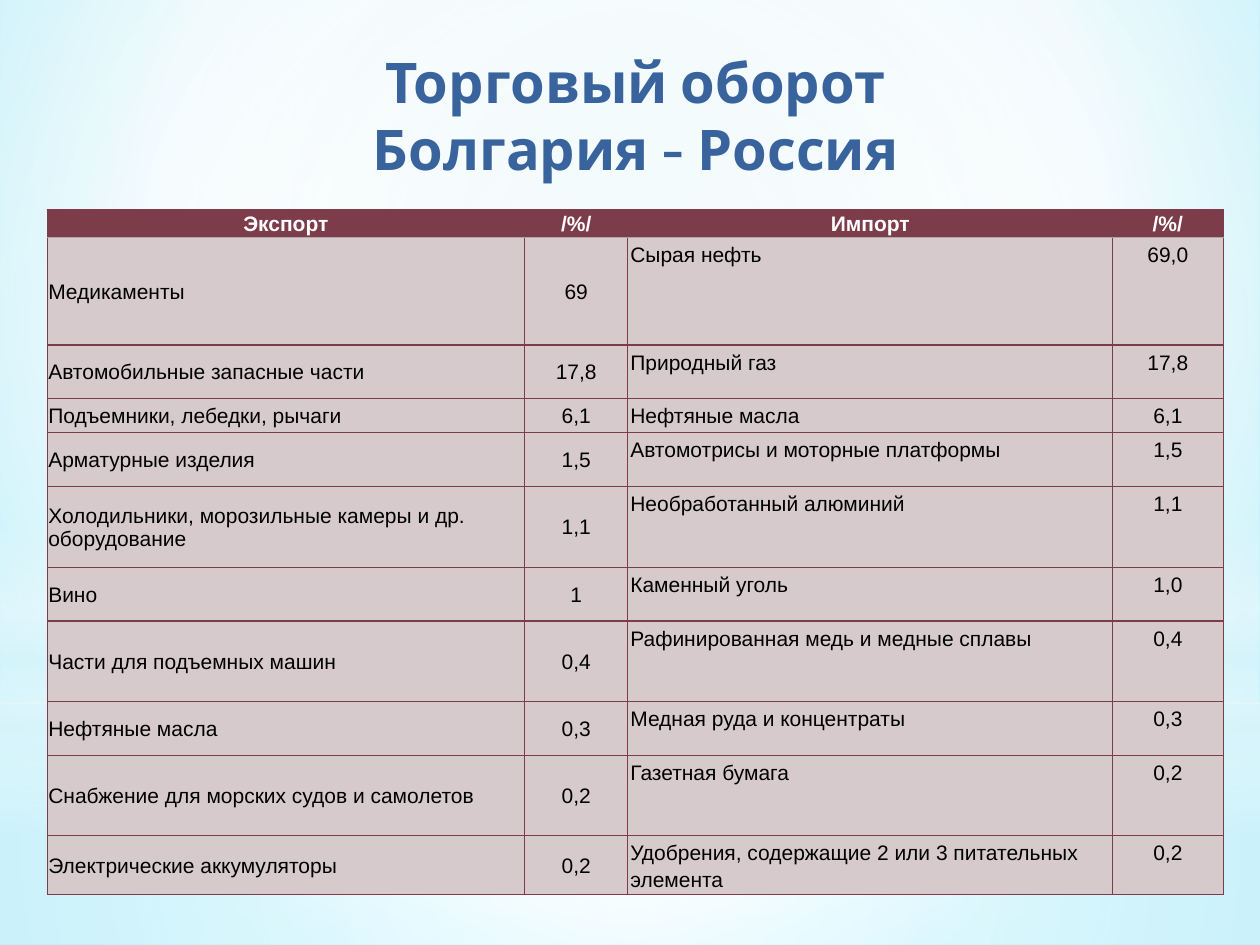
from typing import NamedTuple

from lxml.etree import SubElement
from pptx import Presentation
from pptx.dml.color import RGBColor
from pptx.enum.shapes import MSO_SHAPE as Preset
from pptx.enum.text import MSO_ANCHOR as Anchor, MSO_AUTO_SIZE as AutoSize, PP_ALIGN as Align
from pptx.oxml.ns import qn
from pptx.util import Pt

COLORS = {
    "title": "39639D", "wine": "7D3C4A", "rose": "D6CACC", "grey": "A9A9A9",
    "white": "FFFFFF", "black": "000000",
    "sky": "CDEFF7", "cyan": "7CE7FF", "ice": "DEF5FA",
}
CENTER = (50, 50, 50, 50)


class Stop(NamedTuple):
    position: int
    color: str
    opacity: int = 100


class Glow(NamedTuple):
    preset: Preset
    top: float
    height: float
    stops: list[Stop]
    focus: tuple | None = CENTER  # None gives a vertical linear gradient


class TradeRow(NamedTuple):
    height: float
    exported: str
    export_share: str
    imported: str
    import_share: str


BACKGROUND = [Stop(0, "sky"), Stop(60, "white"), Stop(100, "cyan")]
GLOWS = [
    Glow(Preset.RECTANGLE, 401.76, 138.24,
         [Stop(0, "white", 91), Stop(37, "white", 76), Stop(100, "ice", 79)]),
    Glow(Preset.RECTANGLE, 0, 401.76,
         [Stop(0, "white", 89), Stop(48, "white", 62), Stop(100, "ice", 79)]),
    Glow(Preset.RECTANGLE, 296.64, 180,
         [Stop(0, "white", 0), Stop(29, "white", 30), Stop(45, "ice", 40),
          Stop(55, "white", 26), Stop(65, "ice", 60), Stop(100, "white", 0)], None),
    Glow(Preset.OVAL, 126, 401.76, [Stop(0, "white"), Stop(56, "white", 0)]),
]
COLUMN_WIDTHS = [272.9, 59, 277, 63.2]
ROWS = [
    TradeRow(15.84, "Экспорт", "/%/", "Импорт", "/%/"),
    TradeRow(61.4, "Медикаменты", "69", "Сырая нефть", "69,0"),
    TradeRow(30.8, "Автомобильные запасные части", "17,8", "Природный газ", "17,8"),
    TradeRow(19.4, "Подъемники, лебедки, рычаги", "6,1", "Нефтяные масла", "6,1"),
    TradeRow(30.8, "Арматурные изделия", "1,5", "Автомотрисы и моторные платформы", "1,5"),
    TradeRow(46, "Холодильники, морозильные камеры и др. оборудование", "1,1",
             "Необработанный алюминий", "1,1"),
    TradeRow(30.8, "Вино", "1", "Каменный уголь", "1,0"),
    TradeRow(46, "Части для подъемных машин", "0,4",
             "Рафинированная медь и медные сплавы", "0,4"),
    TradeRow(30.8, "Нефтяные масла", "0,3", "Медная руда и концентраты", "0,3"),
    TradeRow(46, "Снабжение для морских судов и самолетов", "0,2", "Газетная бумага", "0,2"),
    TradeRow(19.4, "Электрические аккумуляторы", "0,2",
             "Удобрения, содержащие 2 или 3 питательных элемента", "0,2"),
]


def rgb(name: str) -> RGBColor:
    return RGBColor.from_string(COLORS[name])


def set_gradient(properties, stops: list[Stop], focus: tuple | None) -> None:
    """Replace the solid fill of a shape or background with a gradient."""
    solid = properties.find(qn("a:solidFill"))
    gradient = solid.makeelement(qn("a:gradFill"), {"rotWithShape": "1"})
    properties.replace(solid, gradient)
    stop_list = SubElement(gradient, qn("a:gsLst"))
    for stop in stops:
        item = SubElement(stop_list, qn("a:gs"), pos=str(stop.position * 1000))
        color = SubElement(item, qn("a:srgbClr"), val=COLORS[stop.color])
        if stop.opacity < 100:
            SubElement(color, qn("a:alpha"), val=str(stop.opacity * 1000))
    if focus is None:
        SubElement(gradient, qn("a:lin"), ang="5400000", scaled="0")
    else:
        circle = SubElement(gradient, qn("a:path"), path="circle")
        edges = {side: str(value * 1000) for side, value in zip("ltrb", focus)}
        SubElement(circle, qn("a:fillToRect"), edges)


def draw_glow(slide, glow: Glow) -> None:
    shape = slide.shapes.add_shape(glow.preset, 0, Pt(glow.top), Pt(720), Pt(glow.height))
    shape.shadow.inherit = False
    shape.line.fill.background()
    shape.fill.solid()
    set_gradient(shape.element.spPr, glow.stops, glow.focus)


def write_text(paragraph, text: str, *, size: float, font: str, color: str,
               bold: bool = False, align: Align = Align.LEFT,
               spacing: float | None = None, after: float | None = None) -> None:
    paragraph.alignment = align
    if spacing is not None:
        paragraph.line_spacing = spacing
    if after is not None:
        paragraph.space_after = Pt(after)
    run = paragraph.add_run()
    run.text = text
    run.font.size = Pt(size)
    run.font.name = font
    run.font.bold = bold
    run.font.color.rgb = rgb(color)


def set_borders(cell, borders: dict[str, tuple[str, float]]) -> None:
    properties = cell._tc.get_or_add_tcPr()
    for index, (side, (color, width)) in enumerate(borders.items()):
        line = properties.makeelement(qn(f"a:ln{side}"), {"w": str(Pt(width))})
        properties.insert(index, line)
        fill = SubElement(line, qn("a:solidFill"))
        SubElement(fill, qn("a:srgbClr"), val=COLORS[color])


def fill_cell(cell, text: str, row: int, column: int) -> None:
    header = row == 0
    import_side = column >= 2 and not header
    # Insets in the order left, top, right, bottom
    insets = (0, 0, 0, 0) if header else (1.44,) * 4 if import_side else (0.72, 0.72, 0.72, 0)
    cell.margin_left, cell.margin_top, cell.margin_right, cell.margin_bottom = map(Pt, insets)
    cell.vertical_anchor = Anchor.TOP if import_side else Anchor.MIDDLE
    cell.fill.solid()
    cell.fill.fore_color.rgb = rgb("wine" if header else "rose")
    thin, divider = ("wine", 0.75), ("grey", 1.25)
    set_borders(cell, {"L": thin, "R": thin, "T": divider if row == 1 else thin,
                       "B": divider if header else thin})
    write_text(cell.text_frame.paragraphs[0], text, size=12, font="Arial", bold=header,
               color="white" if header else "black",
               align=Align.CENTER if header or column % 2 else Align.LEFT,
               spacing=1.15 if import_side else None,
               after=10 if import_side and column == 3 else None)


def draw_table(slide) -> None:
    frame = slide.shapes.add_table(len(ROWS), len(COLUMN_WIDTHS), Pt(26.9), Pt(119.9),
                                   Pt(sum(COLUMN_WIDTHS)), Pt(sum(row.height for row in ROWS)))
    table = frame.table
    table.first_row = table.horz_banding = False
    for column, width in zip(table.columns, COLUMN_WIDTHS):
        column.width = Pt(width)
    for row_index, (height, *texts) in enumerate(ROWS):
        table.rows[row_index].height = Pt(height)
        for column_index, text in enumerate(texts):
            fill_cell(table.cell(row_index, column_index), text, row_index, column_index)


def draw_title(slide) -> None:
    shape = slide.shapes.add_textbox(Pt(102.24), Pt(23.76), Pt(522), Pt(84.96))
    frame = shape.text_frame
    frame.word_wrap = True
    frame.auto_size = AutoSize.SHAPE_TO_FIT_TEXT
    for index, text in enumerate(["Торговый оборот", "Болгария - Россия"]):
        paragraph = frame.add_paragraph() if index else frame.paragraphs[0]
        write_text(paragraph, text, size=32, font="Cabin", color="title",
                   bold=True, align=Align.CENTER)


def main() -> None:
    presentation = Presentation()
    presentation.slide_width, presentation.slide_height = Pt(720), Pt(540)
    slide = presentation.slides.add_slide(presentation.slide_layouts[6])

    # Background and its soft glows
    slide.background.fill.solid()
    set_gradient(slide.element.find(f".//{qn('p:bgPr')}"), BACKGROUND, (20, 10, 20, 60))
    for glow in GLOWS:
        draw_glow(slide, glow)

    # Trade figures and heading
    draw_table(slide)
    draw_title(slide)
    presentation.save("out.pptx")


if __name__ == "__main__":
    main()
